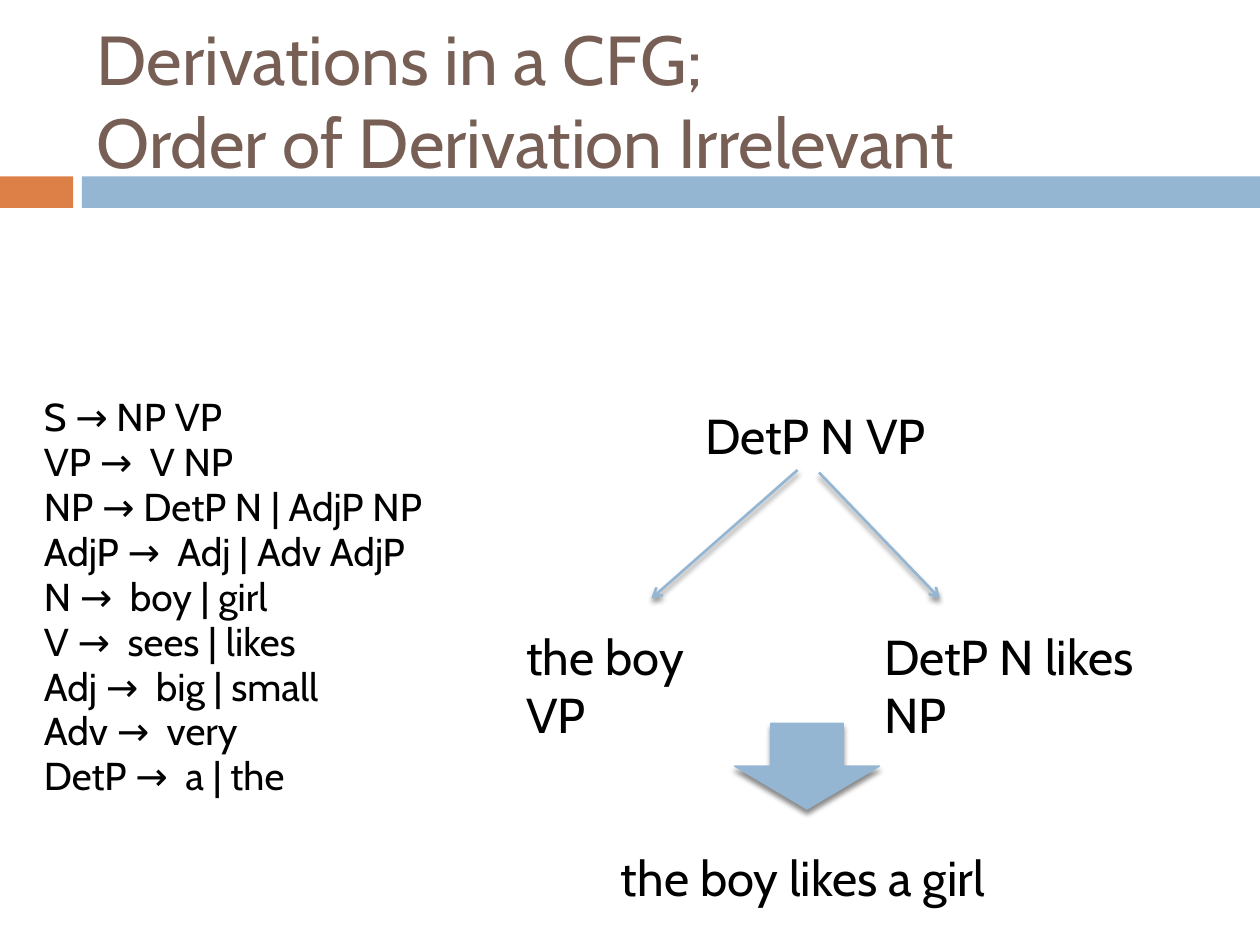
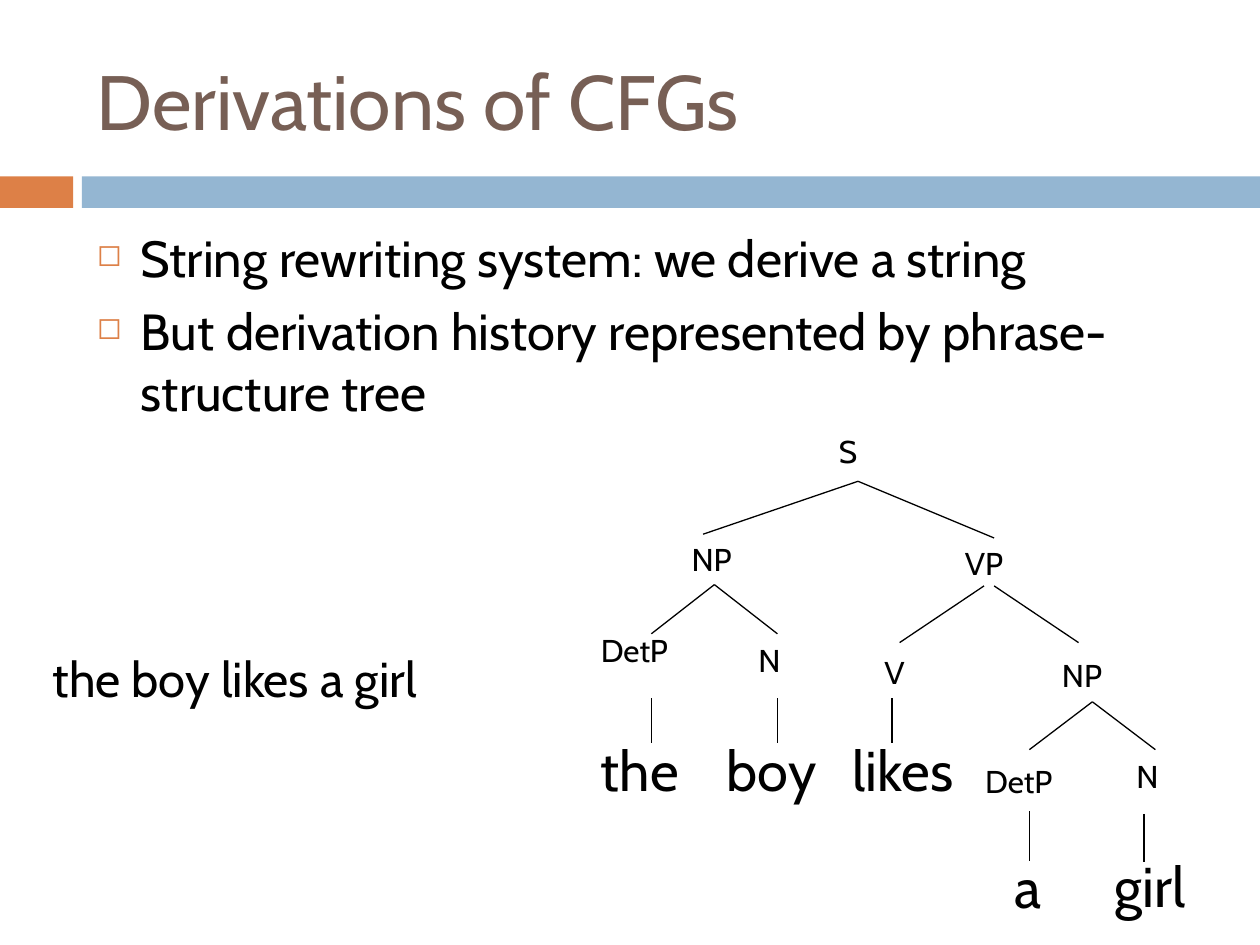
from dataclasses import dataclass

from lxml import etree
from pptx import Presentation
from pptx.dml.color import RGBColor
from pptx.enum.shapes import MSO_CONNECTOR, MSO_SHAPE
from pptx.enum.text import MSO_ANCHOR, MSO_AUTO_SIZE
from pptx.oxml.ns import qn
from pptx.util import Inches, Pt

RECTANGLE = MSO_SHAPE.RECTANGLE
DOWN_ARROW = MSO_SHAPE.DOWN_ARROW
STRAIGHT = MSO_CONNECTOR.STRAIGHT
TOP, MIDDLE = MSO_ANCHOR.TOP, MSO_ANCHOR.MIDDLE
NO_AUTOSIZE = MSO_AUTO_SIZE.NONE

FONT = "Cabin"
ORANGE, BLUE, BROWN, BLACK = "DD8047", "94B6D2", "775F55", "000000"
SENTENCE = "the boy likes a girl"

RULES = [
    "S → NP VP",
    "VP →  V NP",
    "NP → DetP N | AdjP NP",
    "AdjP →  Adj | Adv AdjP",
    "N →  boy | girl",
    "V →  sees | likes",
    "Adj →  big | small",
    "Adv →  very",
    "DetP →  a | the",
]
POINTS = [
    "String rewriting system: we derive a string",
    "But derivation history represented by phrase-structure tree",
]
CATEGORIES = [
    ("S", 1.89, 0, 0.39),
    ("NP", 0.72, 0.86, 0.61),
    ("VP", 2.89, 0.89, 0.59),
    ("DetP", 0, 1.58, 0.9),
    ("N", 1.25, 1.66, 0.42),
    ("V", 2.25, 1.75, 0.4),
    ("NP", 3.66, 1.78, 0.61),
    ("DetP", 3.05, 2.62, 0.9),
    ("N", 4.25, 2.58, 0.42),
]
WORDS = [
    ("the", 0, 2.41, 0.83),
    ("boy", 1, 2.41, 0.91),
    ("likes", 2, 2.41, 1.06),
    ("a", 3.28, 3.34, 0.43),
    ("girl", 4.08, 3.33, 0.81),
]
BRANCHES = [
    ((2.14, 0.44), (0.91, 0.86)),
    ((2.14, 0.44), (3.22, 0.89)),
    ((1, 1.26), (0.5, 1.65)),
    ((1, 1.26), (1.5, 1.65)),
    ((3.14, 1.27), (2.47, 1.72)),
    ((3.22, 1.27), (3.89, 1.72)),
    ((4, 2.19), (3.5, 2.57)),
    ((4, 2.19), (4.5, 2.57)),
]
STEMS = [
    (0.5, 2.16, 2.52),
    (1.5, 2.16, 2.52),
    (2.41, 2.16, 2.52),
    (3.5, 3.06, 3.45),
    (4.41, 3.08, 3.46),
]


@dataclass
class Box:
    left: float
    top: float
    width: float
    height: float

    def inner(self, left, top, width, height):
        return Box(self.left + left, self.top + top, width, height)

    def point(self, offset):
        return Inches(self.left + offset[0]), Inches(self.top + offset[1])

    def lengths(self):
        return [Inches(n) for n in (self.left, self.top, self.width, self.height)]


def color(value):
    return RGBColor.from_string(value)


def add_child(parent, tag, **attributes):
    child = etree.SubElement(parent, qn(tag))
    for name, value in attributes.items():
        child.set(name, str(value))
    return child


def add_effects(item, shadow=False):
    effects = add_child(item._element.spPr, "a:effectLst")
    if shadow:
        outer = add_child(effects, "a:outerShdw", blurRad=38100, dist=30480,
                          dir=5400000, rotWithShape=0)
        tint = add_child(outer, "a:srgbClr", val=BLACK)
        add_child(tint, "a:alpha", val=45000)


def add_bullet(para):
    properties = para._p.get_or_add_pPr()
    add_child(add_child(properties, "a:buClr"), "a:srgbClr", val=ORANGE)
    add_child(properties, "a:buSzPct", val=60000)
    add_child(properties, "a:buChar", char="◻")


def add_text(page, box, text, size=28, fill=BLACK, anchor=TOP, indent=0,
             spacing=None, before=0, bullet=False):
    paragraphs = [text] if isinstance(text, str) else text
    frame = page.shapes.add_textbox(*box.lengths()).text_frame
    frame.word_wrap = True
    frame.auto_size = NO_AUTOSIZE
    frame.vertical_anchor = anchor
    for number, content in enumerate(paragraphs):
        para = frame.add_paragraph() if number else frame.paragraphs[0]
        para.text = content
        para.space_before = Pt(before)
        if spacing:
            para.line_spacing = spacing
        if indent:
            properties = para._p.get_or_add_pPr()
            properties.set("marL", str(Inches(indent)))
            properties.set("indent", str(-Inches(indent)))
        if bullet:
            add_bullet(para)
        for span in para.runs:
            span.font.name = FONT
            span.font.size = Pt(size)
            span.font.color.rgb = color(fill)


def add_block(page, box, kind, fill):
    block = page.shapes.add_shape(kind, *box.lengths())
    block.fill.solid()
    block.fill.fore_color.rgb = color(fill)
    block.line.fill.background()
    block.shadow.inherit = False
    return block


def add_line(page, box, start, end, fill=BLACK, width=0.75, arrow=False):
    line = page.shapes.add_connector(STRAIGHT, *box.point(start), *box.point(end))
    line.line.color.rgb = color(fill)
    line.line.width = Pt(width)
    if arrow:
        add_child(line.line._get_or_add_ln(), "a:tailEnd", type="arrow")
    add_effects(line, shadow=arrow)


def add_page(deck, title, size):
    page = deck.slides.add_slide(deck.slide_layouts[6])
    add_block(page, Box(0, 1.4, 0.58, 0.25), RECTANGLE, ORANGE)
    add_block(page, Box(0.65, 1.4, 9.35, 0.25), RECTANGLE, BLUE)
    add_text(page, Box(0.67, 0.25, 8.92, 1.08), title, size=size, fill=BROWN,
             anchor=MIDDLE)
    return page


def draw_derivation(page, box):
    add_text(page, box.inner(1.42, 0, 1.96, 0.57), "DetP N VP")
    add_line(page, box, (2.25, 0.56), (1.09, 1.58), BLUE, 1.5, arrow=True)
    add_line(page, box, (2.42, 0.58), (3.38, 1.58), BLUE, 1.5, arrow=True)
    add_text(page, box.inner(0, 1.75, 1.93, 0.57), "the boy VP")
    add_text(page, box.inner(2.84, 1.75, 2.65, 0.57), "DetP N likes NP")
    result_arrow = add_block(page, box.inner(1.75, 2.57, 1.15, 0.68), DOWN_ARROW, BLUE)
    result_arrow.line.color.rgb = color(BLUE)
    result_arrow.line.width = Pt(0.79)
    result_arrow._element.spPr.remove(result_arrow._element.spPr.find(qn("a:effectLst")))
    add_effects(result_arrow, shadow=True)
    add_text(page, box.inner(0.75, 3.51, 3.35, 0.57), SENTENCE)


def draw_tree(page, box):
    for start, end in BRANCHES:
        add_line(page, box, start, end)
    for x, top, bottom in STEMS:
        add_line(page, box, (x, top), (x, bottom))
    for labels, size, height in ((CATEGORIES, 18, 0.5), (WORDS, 32, 0.63)):
        for text, left, top, width in labels:
            add_text(page, box.inner(left, top, width, height), text, size=size)


def build_order_page(deck):
    page = add_page(deck, "Derivations in a CFG;\vOrder of Derivation Irrelevant", 39.6)
    add_text(page, Box(0.25, 3.17, 4.33, 4.08), RULES, size=22.2, indent=0.58,
             spacing=0.7, before=7)
    draw_derivation(page, Box(4.08, 3.17, 5.49, 4.08))


def build_tree_page(deck):
    page = add_page(deck, "Derivations of CFGs", 44)
    add_text(page, Box(0.67, 1.75, 8.92, 1.92), POINTS, size=29, indent=0.35,
             before=7, bullet=True)
    add_text(page, Box(0.32, 5.1, 3.35, 0.57), SENTENCE)
    draw_tree(page, Box(4.67, 3.38, 4.89, 3.97))


def main():
    deck = Presentation()
    deck.slide_width, deck.slide_height = Inches(10), Inches(7.5)
    build_order_page(deck)
    build_tree_page(deck)
    deck.save("out.pptx")


if __name__ == "__main__":
    main()
